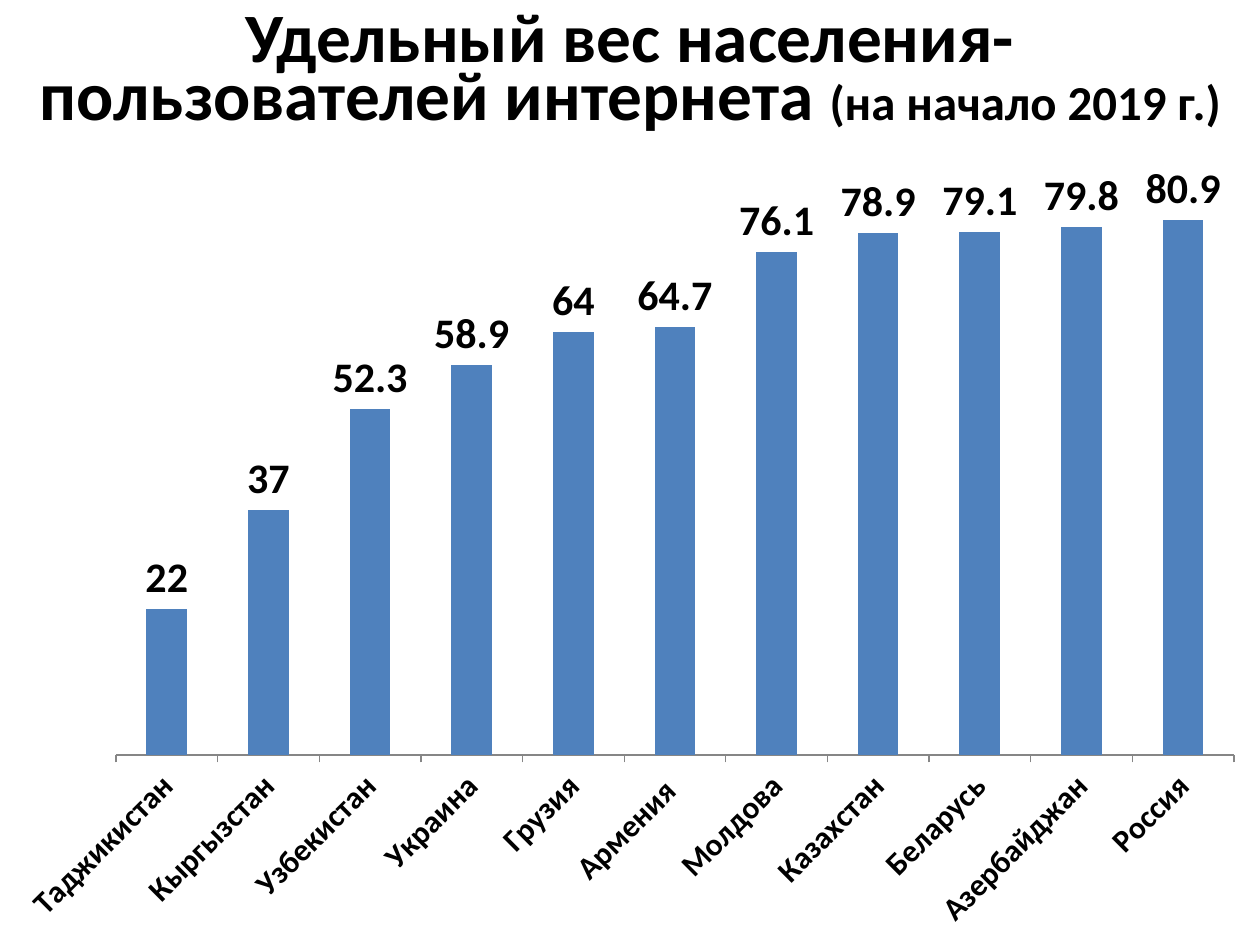
from dataclasses import dataclass

from pptx import Presentation
from pptx import util as u
from pptx.chart.data import CategoryChartData
from pptx.dml.color import RGBColor
from pptx.enum import chart as charts, text
from pptx.oxml import parse_xml
from pptx.oxml.ns import nsdecls, qn
from lxml import etree

PX = u.Inches(1) // 126


@dataclass(frozen=True)
class Theme:
    font: str = "Calibri"
    ink: str = "000000"
    bar: str = "4F81BD"
    axis: str = "868686"
    title: float = 39.6
    subtitle: float = 27.9
    value: float = 24
    category: float = 18


THEME = Theme()
TITLE_BOX = (15, 23, 1230, 160)
CHART_BOX = (0, 145, 1260, 800)
PLOT_BOX = (116, 160, 1118, 595)
USERS = {
    "Таджикистан": 22,
    "Кыргызстан": 37,
    "Узбекистан": 52.3,
    "Украина": 58.9,
    "Грузия": 64,
    "Армения ": 64.7,
    "Молдова": 76.1,
    "Казахстан": 78.9,
    "Беларусь": 79.1,
    "Азербайджан": 79.8,
    "Россия": 80.9,
}


def px(*lengths):
    return [length * PX for length in lengths]


def set_values(target, values):
    for name, value in values.items():
        setattr(target, name, value)


def style_font(font, size):
    set_values(font, {"name": THEME.font, "size": u.Pt(size), "bold": True})
    font.color.rgb = RGBColor.from_string(THEME.ink)


def add_title(slide, box, runs):
    frame = slide.shapes.add_textbox(*px(*box)).text_frame
    set_values(frame, {"word_wrap": True, "vertical_anchor": text.MSO_ANCHOR.MIDDLE})
    paragraph = frame.paragraphs[0]
    set_values(paragraph, {"alignment": text.PP_ALIGN.CENTER, "line_spacing": 0.7})
    for words, size in runs:
        run = paragraph.add_run()
        run.text = words
        style_font(run.font, size)
    paragraph.add_line_break()
    end = etree.SubElement(paragraph._p, qn("a:endParaRPr"))
    end.set("sz", str(round(THEME.subtitle * 100)))


def place_plot(chart, box, plot_box):
    left, top, width, height = box
    x, y, w, h = plot_box
    fractions = {
        "x": (x - left) / width, "y": (y - top) / height,
        "w": w / width, "h": h / height,
    }
    parts = "".join(f'<c:{name} val="{value}"/>' for name, value in fractions.items())
    plot_area = chart._chartSpace.chart.plotArea
    for layout in plot_area.findall(qn("c:layout")):
        plot_area.remove(layout)
    plot_area.insert(0, parse_xml(
        f'<c:layout {nsdecls("c")}><c:manualLayout><c:layoutTarget val="inner"/>'
        f'<c:xMode val="edge"/><c:yMode val="edge"/>{parts}'
        "</c:manualLayout></c:layout>"
    ))


def style_axes(chart):
    set_values(chart.value_axis, {
        "visible": False, "has_major_gridlines": False,
        "minimum_scale": 0, "maximum_scale": 90,
    })
    axis = chart.category_axis
    axis.major_tick_mark = charts.XL_TICK_MARK.OUTSIDE
    axis.format.line.color.rgb = RGBColor.from_string(THEME.axis)
    style_font(axis.tick_labels.font, THEME.category)
    body = next(axis._element.iter(qn("a:bodyPr")))
    body.set("rot", "-2700000")


def add_column_chart(slide, box, plot_box, values):
    data = CategoryChartData()
    data.categories = list(values)
    data.add_series("Series 1", list(values.values()))
    chart = slide.shapes.add_chart(
        charts.XL_CHART_TYPE.COLUMN_CLUSTERED, *px(*box), data).chart
    set_values(chart, {"has_legend": False, "has_title": False})
    set_values(chart.font, {"name": THEME.font, "size": u.Pt(10)})
    plot = chart.plots[0]
    set_values(plot, {"gap_width": 150, "vary_by_categories": False})
    fill = plot.series[0].format.fill
    fill.solid()
    fill.fore_color.rgb = RGBColor.from_string(THEME.bar)
    labels = plot.series[0].data_labels
    set_values(labels, {
        "show_value": True, "position": charts.XL_LABEL_POSITION.OUTSIDE_END,
    })
    style_font(labels.font, THEME.value)
    style_axes(chart)
    place_plot(chart, box, plot_box)


def main():
    presentation = Presentation()
    presentation.slide_width, presentation.slide_height = px(1260, 945)
    slide = presentation.slides.add_slide(presentation.slide_layouts[6])
    add_title(slide, TITLE_BOX, [
        ("Удельный вес населения-пользователей интернета ", THEME.title),
        ("(на начало 2019 г.)", THEME.subtitle),
    ])
    add_column_chart(slide, CHART_BOX, PLOT_BOX, USERS)
    presentation.save("out.pptx")


if __name__ == "__main__":
    main()
